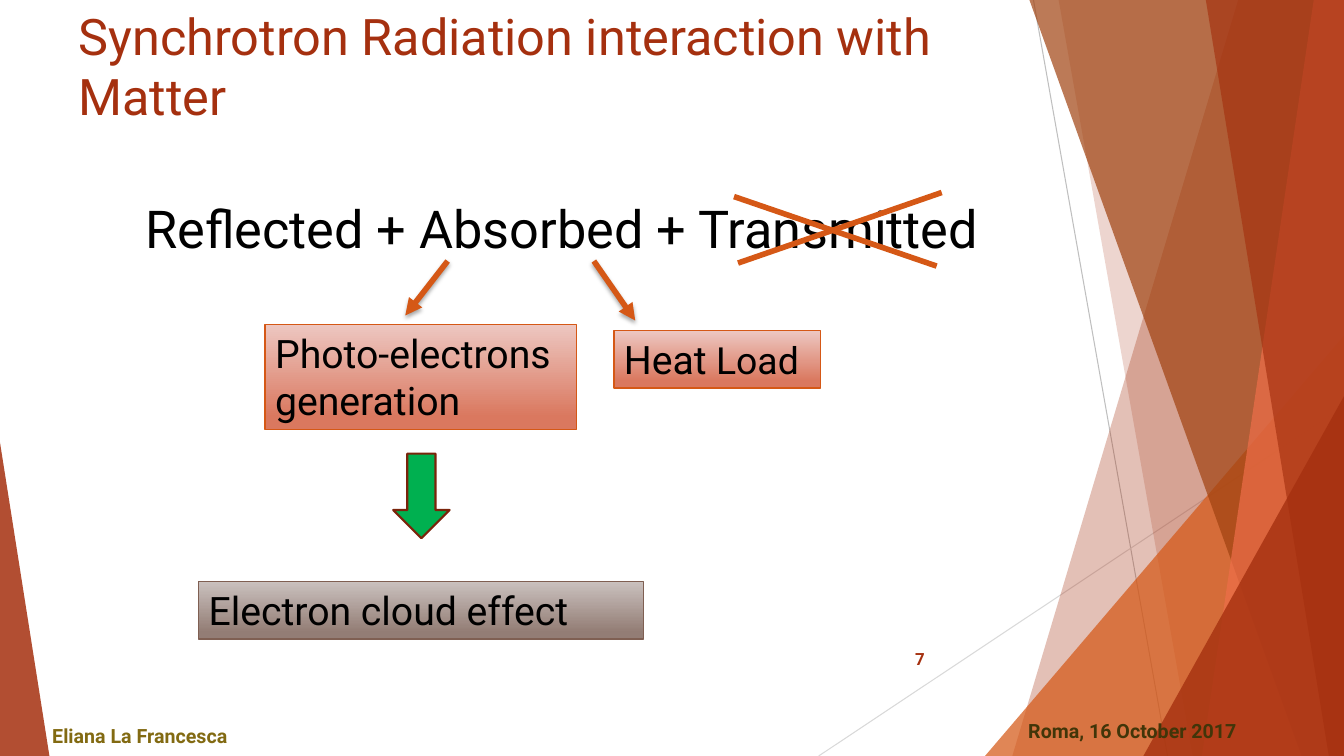
"""Build the slide on how synchrotron radiation interacts with matter."""
from lxml.etree import SubElement
from pptx import Presentation
from pptx.dml.color import RGBColor
from pptx.enum.shapes import MSO_CONNECTOR, MSO_SHAPE
from pptx.enum.text import MSO_ANCHOR, MSO_AUTO_SIZE, PP_ALIGN
from pptx.oxml.ns import qn
from pptx.util import Inches, Pt

RED = RGBColor(0xA5, 0x30, 0x0F)
ORANGE = RGBColor(0xD5, 0x58, 0x16)
BROWN = RGBColor(0xA0, 0x42, 0x10)
CORAL = RGBColor(0xEE, 0x6E, 0x4A)
PINK = RGBColor(0xED, 0xC7, 0xC1)
SALMON = RGBColor(0xDA, 0x78, 0x5F)
TAUPE = RGBColor(0xCA, 0xC1, 0xBE)
UMBER = RGBColor(0x93, 0x7D, 0x75)
UMBER_LINE = RGBColor(0x7F, 0x5F, 0x52)
GREEN = RGBColor(0x00, 0xB0, 0x50)
DARK_RED = RGBColor(0x7A, 0x24, 0x0B)
GOLD = RGBColor(0x82, 0x6A, 0x12)
DARK_GOLD = RGBColor(0x41, 0x35, 0x09)
GREY = RGBColor(0xBF, 0xBF, 0xBF)
LIGHT_GREY = RGBColor(0xD9, 0xD9, 0xD9)
BLACK = RGBColor(0, 0, 0)
W, H = 13.33, 7.5


def write(shape, lines, color, bold=False, align=PP_ALIGN.LEFT, anchor=MSO_ANCHOR.TOP, wrap=True):
    """Fill a shape with lines, each a list of (text, size) runs."""
    tf = shape.text_frame
    tf.auto_size = MSO_AUTO_SIZE.NONE
    tf.word_wrap = wrap
    tf.vertical_anchor = anchor
    for i, runs in enumerate(lines):
        p = tf.add_paragraph() if i else tf.paragraphs[0]
        p.alignment = align
        for text, size in runs:
            r = p.add_run()
            r.text = text
            for name, value in {"name": "Roboto", "size": Pt(size), "bold": bold}.items():
                setattr(r.font, name, value)
            r.font.color.rgb = color


def connect(x1, y1, x2, y2, color, width, arrow=False):
    """Draw a straight line, with an arrowhead and soft shadow if asked."""
    c = s.shapes.add_connector(MSO_CONNECTOR.STRAIGHT, *map(Inches, (x1, y1, x2, y2)))
    c.line.color.rgb = color
    c.line.width = Pt(width)
    spPr = c._element.spPr
    effects = SubElement(spPr, qn("a:effectLst"))
    if arrow:
        SubElement(spPr.find(qn("a:ln")), qn("a:tailEnd"), type="triangle")
        shadow = SubElement(effects, qn("a:outerShdw"), blurRad=str(Pt(3)), dist=str(Pt(2)),
                            dir="5400000", rotWithShape="0")
        black = SubElement(shadow, qn("a:srgbClr"), val="000000")
        SubElement(black, qn("a:alpha"), val="35000")


prs = Presentation()
prs.slide_width, prs.slide_height = Inches(W), Inches(H)
s = prs.slides.add_slide(prs.slide_layouts[5])

connect(10.25, 0, 11.58, H, GREY, 0.75)
connect(W, 4.03, 8.12, H, LIGHT_GREY, 0.75)

facets = [
    ("band", (12.28, 10.04), RED, 30),
    ("band", (10.5, 11.83), RED, 20),
    ("triangle", (9.77, 3.33, 3.56, 1), ORANGE, 72),
    ("band", (10.21, 12.91), BROWN, 70),
    ("band", (13.03, 11.92), CORAL, 70),
    ("band", (11.96, 13.18), RED, 65),
    ("triangle", (11.34, 3.93, 1.99, 1), RED, 80),
    ("triangle", (0, 4.39, 0.49, 0), RED, 85),
]
for kind, geometry, color, opacity in facets:
    if kind == "band":
        top_x, bottom_x = geometry
        fb = s.shapes.build_freeform(Inches(top_x), 0)
        corners = [(W, 0), (W, H), (bottom_x, H)]
        fb.add_line_segments([(Inches(x), Inches(y)) for x, y in corners])
        sp = fb.convert_to_shape()
    else:
        x, y, w, apex = geometry
        sp = s.shapes.add_shape(MSO_SHAPE.ISOSCELES_TRIANGLE, *map(Inches, (x, y, w, H - y)))
        sp.adjustments[0] = apex
    sp.shadow.inherit = False
    sp.fill.solid()
    sp.fill.fore_color.rgb = color
    sp.line.fill.background()
    rgb = sp._element.spPr.find(qn("a:solidFill")).find(qn("a:srgbClr"))
    SubElement(rgb, qn("a:alpha"), val=str(opacity * 1000))

title = s.shapes.title
title.left, title.top, title.width, title.height = map(Inches, (0.68, 0, 8.76, 1.44))
write(title, [[("Synchrotron Radiation interaction with Matter", 36)]], RED)

labels = [
    ((8.71, 6.34, 0.56, 0.4), "7", 12, RED, PP_ALIGN.RIGHT),
    ((0.42, 7.1, 3.24, 0.4), "Eliana La Francesca", 14, GOLD, PP_ALIGN.LEFT),
    ((10.1, 7.05, 3.23, 0.4), "Roma, 16 October 2017", 14, DARK_GOLD, PP_ALIGN.LEFT),
]
for box, text, size, color, align in labels:
    sp = s.shapes.add_textbox(*map(Inches, box))
    write(sp, [[(text, size)]], color, True, align, MSO_ANCHOR.MIDDLE)

sum_box = s.shapes.add_textbox(*map(Inches, (1.14, 1.9, 8.87, 0.73)))
write(sum_box, [[("Reflected + Absorbed + Transmitted", 37.3)]], BLACK, align=PP_ALIGN.CENTER)

connect(4.44, 2.59, 4.02, 3.13, ORANGE, 4, arrow=True)
connect(5.89, 2.59, 6.3, 3.18, ORANGE, 4, arrow=True)
connect(9.34, 1.91, 7.32, 2.61, ORANGE, 4)
connect(9.29, 2.64, 7.28, 1.95, ORANGE, 4)

effects = [
    ((1.97, 5.77, 4.41, 0.57), [[("Electron cloud effect", 28)]], TAUPE, UMBER, UMBER_LINE, True),
    ((6.09, 3.28, 2.05, 0.57), [[("Heat", 28), (" Load", 26.7)]], PINK, SALMON, ORANGE, False),
    ((2.63, 3.22, 3.09, 1.04), [[("Photo-electrons", 28)], [("generation", 28)]],
     PINK, SALMON, ORANGE, False),
]
for box, lines, light, dark, outline, wrap in effects:
    sp = s.shapes.add_shape(MSO_SHAPE.RECTANGLE, *map(Inches, box))
    sp.shadow.inherit = False
    sp.fill.gradient()
    sp.fill.gradient_angle = 270
    for stop, color, position in zip(sp.fill.gradient_stops, (light, dark), (0, 0.88)):
        stop.color.rgb = color
        stop.position = position
    sp.line.color.rgb = outline
    sp.line.width = Pt(1)
    write(sp, lines, BLACK, wrap=wrap)

arrow = s.shapes.add_shape(MSO_SHAPE.DOWN_ARROW, *map(Inches, (3.9, 4.5, 0.56, 0.84)))
arrow.shadow.inherit = False
arrow.fill.solid()
arrow.fill.fore_color.rgb = GREEN
arrow.line.color.rgb = DARK_RED
arrow.line.width = Pt(1.5)

prs.save("out.pptx")
